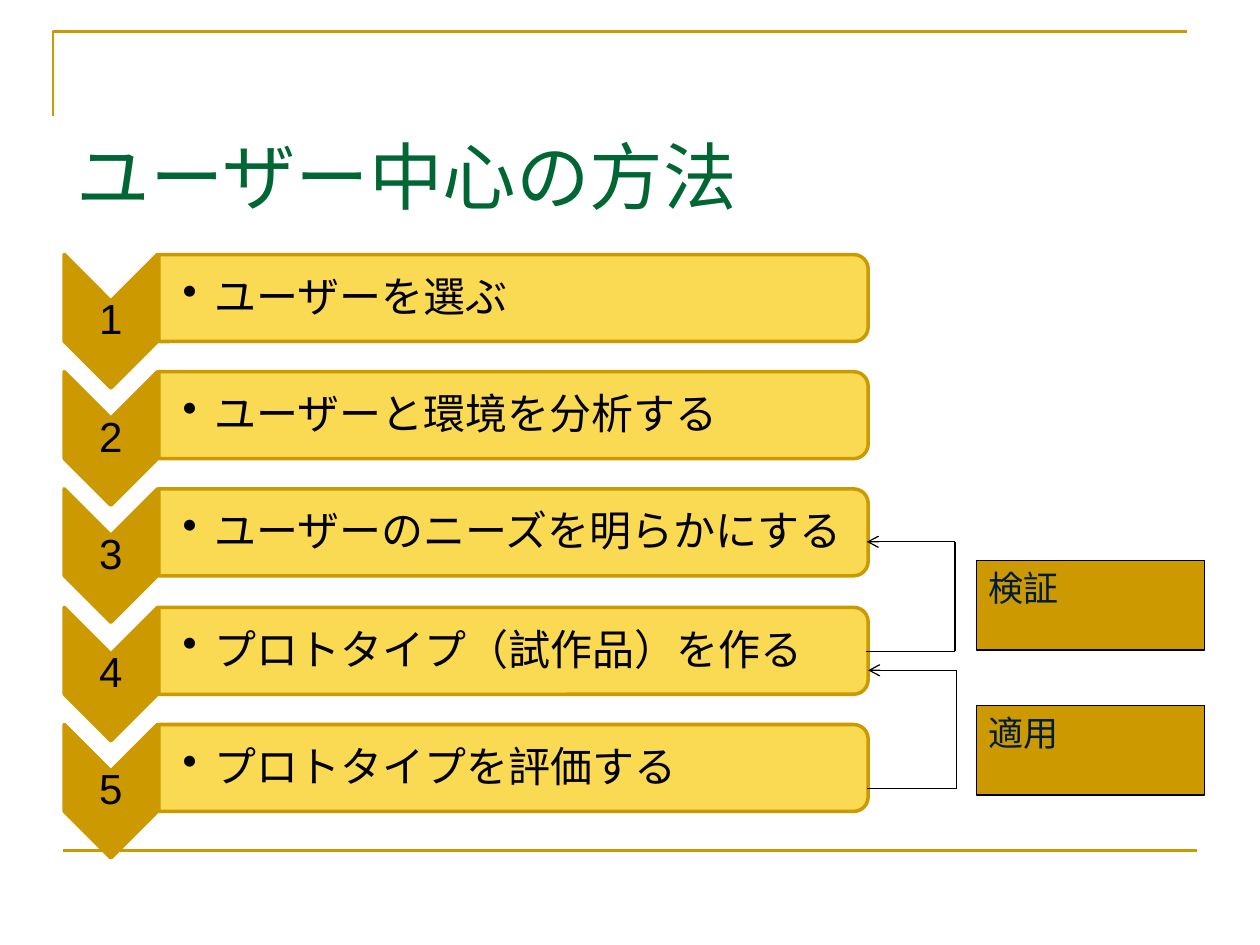
from dataclasses import dataclass
from itertools import pairwise

from lxml import etree
from pptx import Presentation
from pptx.dml.color import RGBColor
from pptx.enum.shapes import MSO_CONNECTOR, MSO_SHAPE
from pptx.enum.text import MSO_ANCHOR, PP_ALIGN
from pptx.oxml.ns import qn
from pptx.util import Emu, Pt

PX = 9144  # 100 px to the inch
STRAIGHT = MSO_CONNECTOR.STRAIGHT
CHEVRON = MSO_SHAPE.CHEVRON
BAR = MSO_SHAPE.ROUND_2_SAME_RECTANGLE
RECT = MSO_SHAPE.RECTANGLE
LEFT, CENTER = PP_ALIGN.LEFT, PP_ALIGN.CENTER
TOP, MIDDLE = MSO_ANCHOR.TOP, MSO_ANCHOR.MIDDLE

GOLD = RGBColor(0xCC, 0x99, 0x00)
YELLOW = RGBColor(0xFA, 0xD7, 0x40)
GREEN = RGBColor(0x00, 0x66, 0x33)
NAVY = RGBColor(0x00, 0x1C, 0x3D)
BLACK = RGBColor(0x00, 0x00, 0x00)


@dataclass(frozen=True)
class Box:
    x: int
    y: int
    w: int
    h: int

    def down(self, dy: int) -> "Box":
        return Box(self.x, self.y + dy, self.w, self.h)

    def emu(self) -> list[Emu]:
        return [px(n) for n in (self.x, self.y, self.w, self.h)]


@dataclass(frozen=True)
class Style:
    font: str
    size: int
    color: RGBColor
    align: PP_ALIGN = LEFT
    anchor: MSO_ANCHOR = TOP
    insets: tuple[int, int, int, int] = (10, 5, 10, 5)
    spacing: float = 1.0
    bullet: bool = False


@dataclass(frozen=True)
class Feedback:
    label: str
    box: Box
    route: tuple[tuple[int, int], ...]


TITLE = Style("Times New Roman", 42, GREEN)
NUMBER = Style("Arial", 24, BLACK, CENTER, MIDDLE, (2, 2, 2, 2), 0.9)
STEP = Style("Arial", 24, BLACK, LEFT, MIDDLE, (19, 2, 2, 2), 0.9, True)
NOTE = Style("DejaVu Sans", 20, NAVY)

STEPS = (
    "ユーザーを選ぶ",
    "ユーザーと環境を分析する",
    "ユーザーのニーズを明らかにする",
    "プロトタイプ（試作品）を作る",
    "プロトタイプを評価する",
)
STEPS_SPAN = 373  # from the first step to the last
FEEDBACKS = (
    Feedback("適用", Box(775, 560, 181, 71),
             ((688, 626), (759, 626), (759, 532), (689, 532))),
    Feedback("検証", Box(775, 445, 181, 71),
             ((687, 517), (758, 517), (758, 430), (688, 430))),
)


def px(n: int) -> Emu:
    return Emu(n * PX)


def write(sp, text: str, style: Style) -> None:
    tf = sp.text_frame
    tf.word_wrap = True
    tf.vertical_anchor = style.anchor
    tf.margin_left, tf.margin_top, tf.margin_right, tf.margin_bottom = map(px, style.insets)
    tf.text = text
    p = tf.paragraphs[0]
    p.alignment = style.align
    p.line_spacing = style.spacing
    if style.bullet:
        pPr = p._p.get_or_add_pPr()
        pPr.set("marL", str(px(25)))
        pPr.set("indent", str(px(-25)))
        etree.SubElement(pPr, qn("a:buChar")).set("char", "•")
    font = p.runs[0].font
    font.name, font.size = style.font, Pt(style.size)
    font.color.rgb = style.color


def add_text(s, box: Box, text: str, style: Style) -> None:
    write(s.shapes.add_textbox(*box.emu()), text, style)


def add_block(s, kind: MSO_SHAPE, box: Box, fill: RGBColor, line: RGBColor,
              width: float, rotation: int = 0):
    sp = s.shapes.add_shape(kind, *box.emu())
    sp.shadow.inherit = False
    sp.rotation = rotation
    sp.fill.solid()
    sp.fill.fore_color.rgb = fill
    sp.line.color.rgb = line
    sp.line.width = Pt(width)
    return sp


def set_alpha(sp, percent: int) -> None:
    color = sp._element.spPr.find(qn("a:solidFill"))[0]
    etree.SubElement(color, qn("a:alpha")).set("val", str(percent * 1000))


def add_line(s, start: tuple[int, int], end: tuple[int, int], color: RGBColor,
             width: float, arrow: bool = False) -> None:
    c = s.shapes.add_connector(STRAIGHT, *map(px, start + end))
    c.line.color.rgb = color
    c.line.width = Pt(width)
    if arrow:
        etree.SubElement(c.line._get_or_add_ln(), qn("a:tailEnd")).set("type", "arrow")
    etree.SubElement(c._element.spPr, qn("a:effectLst"))


def add_frame(s) -> None:
    builder = s.shapes.build_freeform(42, 92, scale=PX)
    builder.add_line_segments([(42, 25), (942, 25)], close=False)
    corner = builder.convert_to_shape()
    corner.shadow.inherit = False
    corner.fill.background()
    corner.line.color.rgb = GOLD
    corner.line.width = Pt(1.5)
    add_line(s, (50, 675), (950, 675), GOLD, 1.5)


def add_step(s, index: int, text: str) -> None:
    dy = round(index * STEPS_SPAN / (len(STEPS) - 1))
    add_block(s, CHEVRON, Box(35, 218, 106, 74).down(dy), GOLD, GOLD, 2, 90)
    add_text(s, Box(51, 239, 74, 32).down(dy), str(index + 1), NUMBER)
    bar = add_block(s, BAR, Box(373, -45, 69, 563).down(dy), YELLOW, GOLD, 2, 90)
    set_alpha(bar, 90)
    add_text(s, Box(126, 206, 560, 62).down(dy), text, STEP)


def add_feedback(s, feedback: Feedback) -> None:
    for start, end in pairwise(feedback.route):
        add_line(s, start, end, BLACK, 0.75, arrow=end == feedback.route[-1])
    sp = add_block(s, RECT, feedback.box, GOLD, BLACK, 0.75)
    write(sp, feedback.label, NOTE)


def main() -> None:
    prs = Presentation()
    prs.slide_width, prs.slide_height = px(1000), px(750)
    s = prs.slides.add_slide(prs.slide_layouts[6])

    # Frame and title
    add_frame(s)
    add_text(s, Box(51, 99, 900, 125), "ユーザー中心の方法", TITLE)

    # Numbered steps
    for index, text in enumerate(STEPS):
        add_step(s, index, text)

    # Loops back to earlier steps
    for feedback in FEEDBACKS:
        add_feedback(s, feedback)

    prs.save("out.pptx")


if __name__ == "__main__":
    main()
